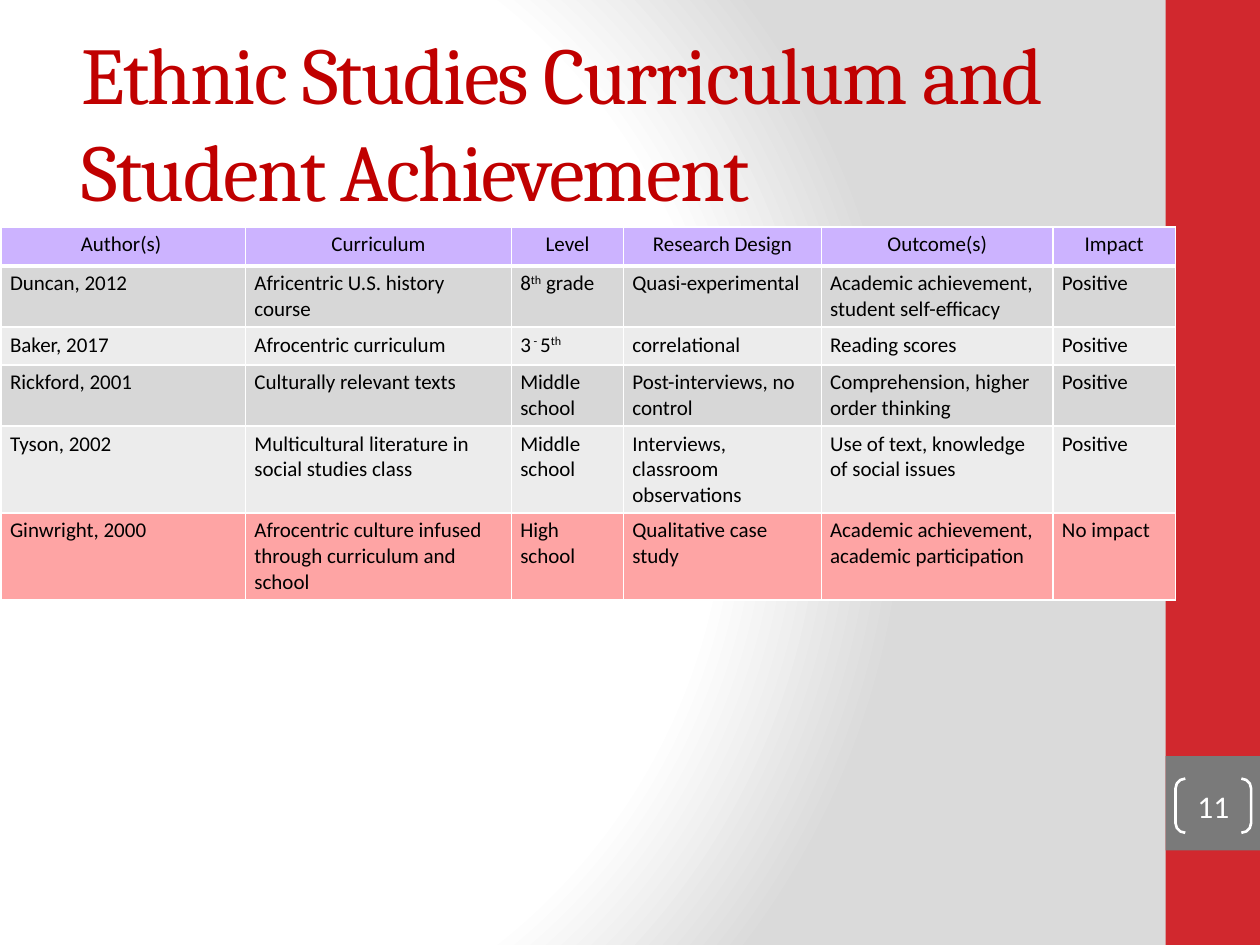
from pptx import Presentation
from pptx.dml.color import RGBColor
from pptx.enum.shapes import MSO_SHAPE
from pptx.enum.text import MSO_ANCHOR, MSO_AUTO_SIZE, PP_ALIGN
from pptx.oxml import parse_xml
from pptx.oxml.ns import nsdecls
from pptx.util import Inches, Pt

RECTANGLE, BRACKETS = MSO_SHAPE.RECTANGLE, MSO_SHAPE.DOUBLE_BRACKET
MIDDLE, NO_FIT = MSO_ANCHOR.MIDDLE, MSO_AUTO_SIZE.NONE
LEFT, CENTER = PP_ALIGN.LEFT, PP_ALIGN.CENTER

WHITE = RGBColor(0xFF, 0xFF, 0xFF)
BLACK = RGBColor(0x00, 0x00, 0x00)
BACKDROP_GRAY = RGBColor(0xDA, 0xDA, 0xDA)
BAR_RED = RGBColor(0xD1, 0x28, 0x2E)
BADGE_GRAY = RGBColor(0x7A, 0x7A, 0x7A)
TITLE_RED = RGBColor(0xC0, 0x00, 0x00)
HEADER_PURPLE = RGBColor(0xCC, 0xB3, 0xFF)
BAND_DARK = RGBColor(0xD7, 0xD7, 0xD7)
BAND_LIGHT = RGBColor(0xEC, 0xEC, 0xEC)
NO_IMPACT_PINK = RGBColor(0xFE, 0xA4, 0xA4)

COLUMN_WIDTHS = (1.94, 2.11, 0.89, 1.57, 1.84, 0.97)
ROW_HEIGHTS = (0.31, 0.38, 0.3, 0.38, 0.38, 0.53)
ROW_FILLS = (HEADER_PURPLE, BAND_DARK, BAND_LIGHT, BAND_DARK, BAND_LIGHT, NO_IMPACT_PINK)
STUDIES = (
    ("Author(s) ", "Curriculum", "Level", "Research Design", "Outcome(s)", "Impact"),
    ("Duncan, 2012", "Africentric U.S. history course", "8^th^ grade",
     "Quasi-experimental", "Academic achievement, student self-efficacy", "Positive"),
    ("Baker, 2017", "Afrocentric curriculum", "3^ - ^5^th",
     "correlational", "Reading scores", "Positive"),
    ("Rickford, 2001", "Culturally relevant texts", "Middle school",
     "Post-interviews, no control", "Comprehension, higher order thinking", "Positive"),
    ("Tyson, 2002", "Multicultural literature in social studies class", "Middle school",
     "Interviews, classroom observations", "Use of text, knowledge of social issues", "Positive"),
    ("Ginwright, 2000", "Afrocentric culture infused through curriculum and school", "High school",
     "Qualitative case study", "Academic achievement, academic participation", "No impact"),
)


def set_background(slide):
    """Give the slide a circular gradient from white to gray."""
    stops = "".join(
        f'<a:gs pos="{position * 1000}"><a:srgbClr val="{color}"/></a:gs>'
        for position, color in ((0, WHITE), (75, WHITE), (100, BACKDROP_GRAY))
    )
    background = parse_xml(
        f'<p:bg {nsdecls("p", "a")}><p:bgPr><a:gradFill rotWithShape="1">'
        f'<a:gsLst>{stops}</a:gsLst><a:path path="circle">'
        '<a:fillToRect l="20000" t="50000" r="100000" b="50000"/></a:path>'
        '</a:gradFill><a:effectLst/></p:bgPr></p:bg>'
    )
    slide.element.cSld.insert(0, background)


def format_run(run, size, font_name, color):
    """Set the size, typeface and colour of a run."""
    run.font.size = Pt(size)
    run.font.name = font_name
    run.font.color.rgb = color


def set_margins(container, horizontal, vertical):
    """Set the inner margins of a text frame or table cell."""
    container.margin_left = container.margin_right = Inches(horizontal)
    container.margin_top = container.margin_bottom = Inches(vertical)


def add_title(slide, text):
    """Fill and place the title placeholder."""
    title = slide.shapes.title
    title.left, title.top = Inches(0.55), Inches(0.68)
    title.width, title.height = Inches(9.12), Inches(0.56)
    frame = title.text_frame
    frame.text = text
    frame.word_wrap = True
    frame.auto_size = NO_FIT
    frame.vertical_anchor = MIDDLE
    paragraph = frame.paragraphs[0]
    paragraph.alignment = LEFT
    run = paragraph.runs[0]
    format_run(run, 46, "Cambria", TITLE_RED)
    run.font._element.set("spc", "-100")


def add_block(slide, top, height, color):
    """Add a plain rectangle to the right-hand side bar."""
    block = slide.shapes.add_shape(
        RECTANGLE, Inches(9.25), Inches(top), Inches(0.75), Inches(height))
    block.shadow.inherit = False
    block.fill.solid()
    block.fill.fore_color.rgb = color
    block.line.fill.background()


def add_slide_number(slide, number):
    """Add the slide number between brackets."""
    badge = slide.shapes.add_shape(
        BRACKETS, Inches(9.33), Inches(6.18), Inches(0.6), Inches(0.43))
    badge.adjustments[0] = 0.18
    badge.shadow.inherit = False
    badge.fill.background()
    badge.line.color.rgb = WHITE
    badge.line.width = Pt(1.5)
    frame = badge.text_frame
    set_margins(frame, 0, 0)
    frame.vertical_anchor = MIDDLE
    frame.text = number
    paragraph = frame.paragraphs[0]
    paragraph.alignment = CENTER
    format_run(paragraph.runs[0], 18, "Calibri", WHITE)


def set_borders(cell, top, bottom):
    """Draw white borders around a cell."""
    properties = cell._tc.get_or_add_tcPr()
    for side, width in (("L", 1), ("R", 1), ("T", top), ("B", bottom)):
        properties.append(parse_xml(
            f'<a:ln{side} {nsdecls("a")} w="{Pt(width)}"><a:solidFill>'
            f'<a:srgbClr val="{WHITE}"/></a:solidFill></a:ln{side}>'))


def write_cell(cell, text, alignment):
    """Write cell text, raising the parts between carets."""
    paragraph = cell.text_frame.paragraphs[0]
    paragraph.alignment = alignment
    for index, part in enumerate(text.split("^")):
        run = paragraph.add_run()
        run.text = part
        format_run(run, 12, "Calibri", BLACK)
        if index % 2:
            run.font._element.set("baseline", "30000")


def add_studies_table(slide):
    """Add the table of curriculum studies."""
    table = slide.shapes.add_table(
        len(ROW_HEIGHTS), len(COLUMN_WIDTHS), Inches(0.01), Inches(1.8),
        Inches(sum(COLUMN_WIDTHS)), Inches(sum(ROW_HEIGHTS))).table
    for column, width in zip(table.columns, COLUMN_WIDTHS):
        column.width = Inches(width)
    for index, (row, height) in enumerate(zip(table.rows, ROW_HEIGHTS)):
        row.height = Inches(height)
        for cell, text in zip(row.cells, STUDIES[index]):
            set_margins(cell, 0.07, 0.04)
            set_borders(cell, 3 if index == 1 else 1, 3 if index == 0 else 1)
            cell.fill.solid()
            cell.fill.fore_color.rgb = ROW_FILLS[index]
            write_cell(cell, text, LEFT if index else CENTER)


def main():
    """Build the slide and save it."""
    presentation = Presentation()
    presentation.slide_width, presentation.slide_height = Inches(10), Inches(7.5)
    slide = presentation.slides.add_slide(presentation.slide_layouts[5])
    set_background(slide)
    add_block(slide, 0, 7.5, BAR_RED)
    add_block(slide, 6, 0.75, BADGE_GRAY)
    add_studies_table(slide)
    add_slide_number(slide, "11")
    add_title(slide, "Ethnic Studies Curriculum and Student Achievement")
    presentation.save("out.pptx")


if __name__ == "__main__":
    main()
